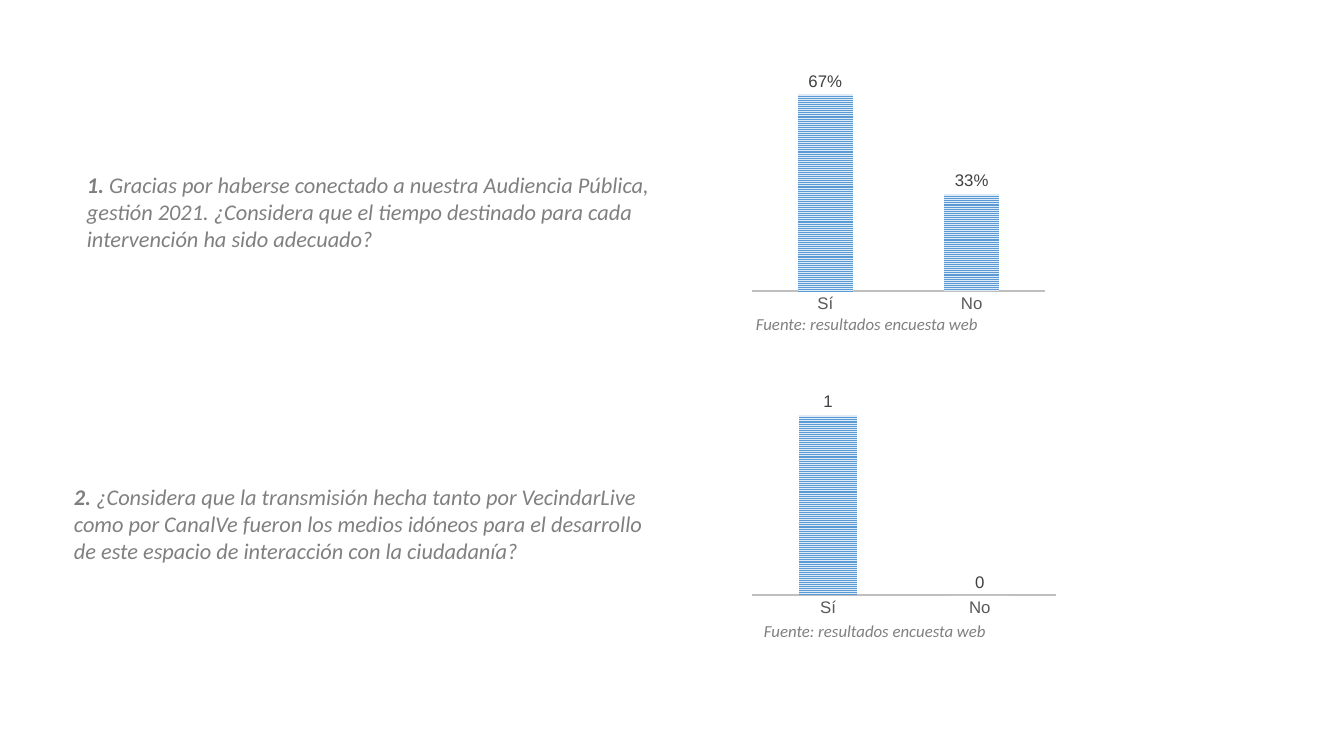
from dataclasses import dataclass

from pptx import Presentation
from pptx.chart.data import CategoryChartData
from pptx.dml.color import RGBColor
from pptx.enum.chart import XL_CHART_TYPE, XL_LABEL_POSITION, XL_TICK_MARK
from pptx.enum.dml import MSO_PATTERN
from pptx.util import Inches, Pt

SLIDE = (1344, 756)
PX_PER_INCH = 100.8
ANSWERS = ("Sí", "No")
SOURCE = "Fuente: resultados encuesta web"

QUESTIONS = [
    {
        "number": "1. ",
        "text": "Gracias por haberse conectado a nuestra Audiencia Pública, gestión 2021. "
                "¿Considera que el tiempo destinado para cada intervención ha sido adecuado?",
        "text_box": (77, 166, 584, 92),
        "chart_box": (746, 51, 305, 267),
        "source_box": (746, 311, 361, 85),
        "values": (0.67, 0.33),
        "format": "0%",
        "top": 0.8,
    },
    {
        "number": "2. ",
        "text": "¿Considera que la transmisión hecha tanto por VecindarLive como por CanalVe "
                "fueron los medios idóneos para el desarrollo de este espacio de "
                "interacción con la ciudadanía?",
        "text_box": (64, 478, 608, 119),
        "chart_box": (746, 374, 316, 248),
        "source_box": (754, 618, 253, 34),
        "values": (1, 0),
        "format": "General",
        "top": 1.2,
    },
]


@dataclass(frozen=True)
class Theme:
    text: str = "808080"
    category: str = "595959"
    label: str = "404040"
    axis: str = "BFBFBF"
    bar: str = "5B9BD5"
    bar_back: str = "DEEBF7"
    text_font: str = "Calibri"
    chart_font: str = "Arial"
    question_size: int = 16
    small_size: int = 12


THEME = Theme()


def px(n):
    return Inches(n / PX_PER_INCH)


def rgb(color):
    return RGBColor.from_string(color)


def set_font(font, name, size, color):
    font.name = name
    font.size = Pt(size)
    font.color.rgb = rgb(color)


def add_text(s, box, size, runs):
    tf = s.shapes.add_textbox(*map(px, box)).text_frame
    tf.word_wrap = True
    p = tf.paragraphs[0]
    set_font(p.font, THEME.text_font, size, THEME.text)
    p.font.italic = True
    for text, bold in runs:
        r = p.add_run()
        r.text = text
        r.font.bold = bold
    return p


def add_bars(s, box, values, number_format, top):
    data = CategoryChartData(number_format=number_format)
    data.categories = ANSWERS
    data.add_series("Series 1", values)
    chart = s.shapes.add_chart(XL_CHART_TYPE.COLUMN_CLUSTERED, *map(px, box), data).chart
    chart.has_title = False
    chart.has_legend = False
    set_font(chart.font, THEME.chart_font, THEME.small_size, THEME.category)

    value_axis = chart.value_axis
    value_axis.visible = False
    value_axis.has_major_gridlines = False
    value_axis.minimum_scale = 0
    value_axis.maximum_scale = top

    category_axis = chart.category_axis
    category_axis.major_tick_mark = XL_TICK_MARK.NONE
    category_axis.format.line.color.rgb = rgb(THEME.axis)
    category_axis.format.line.width = Pt(1.5)

    plot = chart.plots[0]
    plot.vary_by_categories = False
    plot.gap_width = 164
    plot.overlap = -22
    fill = plot.series[0].format.fill
    fill.patterned()
    fill.pattern = MSO_PATTERN.NARROW_HORIZONTAL
    fill.fore_color.rgb = rgb(THEME.bar)
    fill.back_color.rgb = rgb(THEME.bar_back)

    plot.has_data_labels = True
    labels = plot.data_labels
    labels.show_value = True
    labels.position = XL_LABEL_POSITION.OUTSIDE_END
    labels.number_format = number_format
    labels.number_format_is_linked = False
    set_font(labels.font, THEME.chart_font, THEME.small_size, THEME.label)


def main():
    prs = Presentation()
    prs.slide_width, prs.slide_height = map(px, SLIDE)
    s = prs.slides.add_slide(prs.slide_layouts[6])
    for q in QUESTIONS:
        add_text(s, q["text_box"], THEME.question_size,
                 [(q["number"], True), (q["text"], False)])
        add_bars(s, q["chart_box"], q["values"], q["format"], q["top"])
        p = add_text(s, q["source_box"], THEME.small_size, [(SOURCE, False)])
        p.line_spacing = 0.9
    prs.save("out.pptx")


if __name__ == "__main__":
    main()
